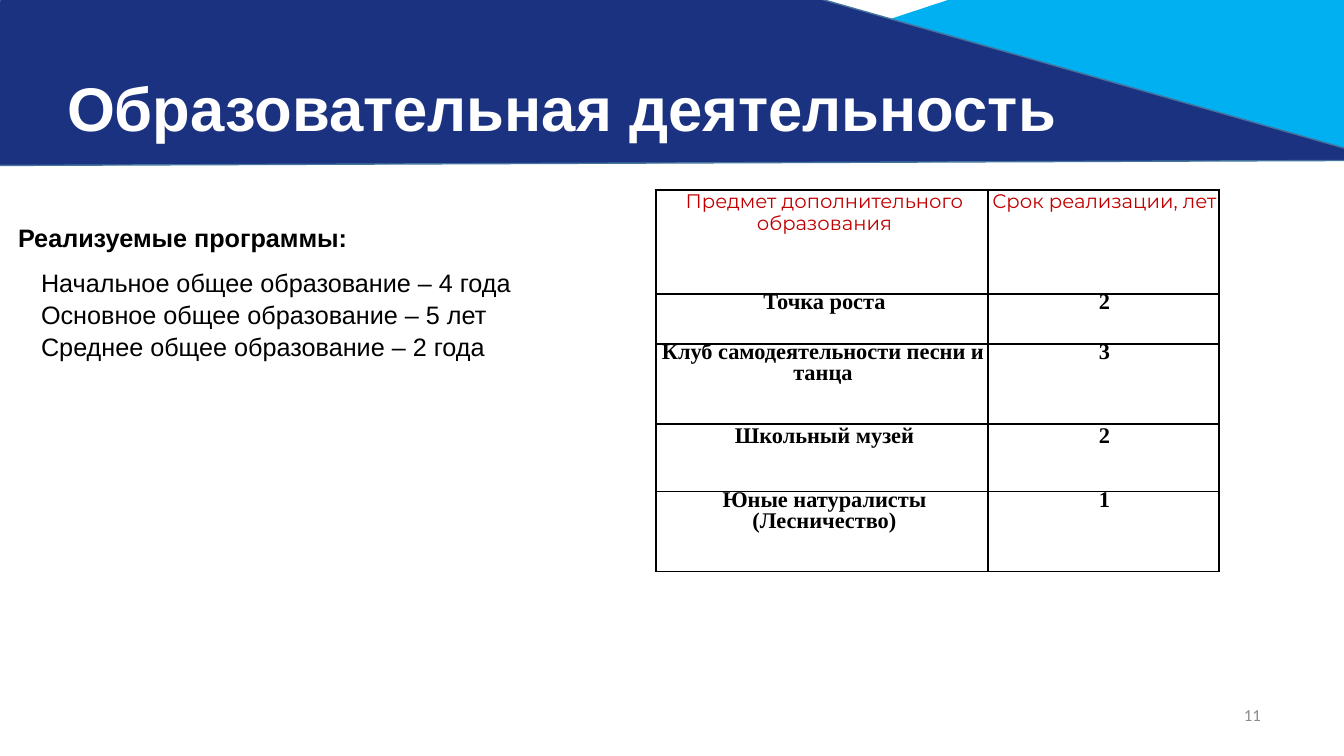
"""Build the slide about educational programmes."""
from dataclasses import dataclass

from lxml import etree
from pptx import Presentation
from pptx import util as u
from pptx.dml.color import RGBColor
from pptx.enum import shapes, text
from pptx.oxml.ns import qn

SCALE = 12192000 / 1344
LEADING = u.Pt(14.8)
AL, ANCHOR = text.PP_ALIGN, text.MSO_ANCHOR


def px(n: int) -> u.Emu:
    return u.Emu(round(n * SCALE))


def rgb(value: str) -> RGBColor:
    return RGBColor.from_string(value)


def apply(target, values: dict) -> None:
    for name, value in values.items():
        setattr(target, name, value)


@dataclass
class Block:
    box: tuple
    lines: list
    size: int
    color: str
    font: str = "Arial"
    bold: bool = False
    align: int = AL.LEFT
    anchor: int = ANCHOR.TOP
    spacing: float = 1.0


@dataclass
class Row:
    height: int
    name: str
    term: str
    before: float
    indent: int = 5
    exact: bool = True
    size: int = 16
    font: str = "Times New Roman"
    color: str = "000000"
    bold: bool = True


def place(sp, box: tuple) -> None:
    apply(sp, dict(zip(("left", "top", "width", "height"), map(px, box))))


def format_font(font, item) -> None:
    apply(font, {"name": item.font, "size": u.Pt(item.size), "bold": item.bold})
    font.color.rgb = rgb(item.color)


def write_block(sp, b: Block) -> None:
    place(sp, b.box)
    tf = sp.text_frame
    tf.text = "\n".join(b.lines)
    apply(tf, {"word_wrap": True, "auto_size": text.MSO_AUTO_SIZE.NONE,
               "vertical_anchor": b.anchor})
    for p in tf.paragraphs:
        apply(p, {"alignment": b.align, "space_before": u.Pt(0),
                  "line_spacing": b.spacing})
        pPr = p._p.get_or_add_pPr()
        pPr.set("marL", "0")
        pPr.set("indent", "0")
        etree.SubElement(pPr, qn("a:buNone"))
        format_font(p.runs[0].font, b)


def add_border(cell) -> None:
    tcPr = cell._tc.get_or_add_tcPr()
    for i, side in enumerate(("lnL", "lnR", "lnT", "lnB")):
        ln = etree.Element(qn(f"a:{side}"), w=str(u.Pt(1)))
        fill = etree.SubElement(ln, qn("a:solidFill"))
        etree.SubElement(fill, qn("a:srgbClr"), val="000000")
        tcPr.insert(i, ln)


def write_cell(cell, value: str, row: Row, indent: int) -> None:
    apply(cell, dict.fromkeys(
        ("margin_left", "margin_right", "margin_top", "margin_bottom"), 0))
    cell.fill.background()
    add_border(cell)
    tf = cell.text_frame
    tf.text = value
    for i, p in enumerate(tf.paragraphs):
        apply(p, {"alignment": AL.CENTER,
                  "space_before": u.Pt(0.7 if i else row.before)})
        if row.exact or i:
            p.line_spacing = LEADING
        p._p.get_or_add_pPr().set("marL", str(px(indent)))
        format_font(p.runs[0].font, row)


def add_table(s, left: int, top: int, widths: list, rows: list) -> None:
    box = (left, top, sum(widths), sum(row.height for row in rows))
    table = s.shapes.add_table(len(rows), len(widths), *map(px, box)).table
    apply(table, {"first_row": False, "horz_banding": False})
    for column, width in zip(table.columns, widths):
        column.width = px(width)
    for i, row in enumerate(rows):
        table.rows[i].height = px(row.height)
        write_cell(table.cell(i, 0), row.name, row, row.indent)
        write_cell(table.cell(i, 1), row.term, row, 2)


def add_banner(s) -> None:
    builder = s.shapes.build_freeform(463, 160, SCALE)
    builder.add_line_segments([(1348, 160), (1348, -132)])
    wedge = builder.convert_to_shape()
    stripe = s.shapes.add_shape(shapes.MSO_SHAPE.DIAGONAL_STRIPE,
                                *map(px, (-19, -36, 1378, 398)))
    stripe.rotation = 15.9
    for sp, color in ((wedge, "00B0F0"), (stripe, "1B3281")):
        sp.shadow.inherit = False
        sp.fill.solid()
        sp.fill.fore_color.rgb = rgb(color)
        s.shapes.title._element.addprevious(sp._element)
    wedge.line.fill.background()
    stripe.line.color.rgb = rgb("43739E")
    stripe.line.width = u.Pt(1)


TITLE = Block((57, 65, 1251, 120), ["Образовательная деятельность"], 44, "FFFFFF",
              bold=True, align=AL.JUSTIFY)
HEADING = Block((8, 217, 1336, 50), ["Реализуемые программы:"], 18, "000000", bold=True)
PROGRAMMES = Block((31, 261, 502, 132), [
    "Начальное общее образование – 4 года",
    "Основное общее образование – 5 лет",
    "Среднее общее образование – 2 года"], 18, "000000", spacing=1.05)
NUMBER = Block((969, 695, 302, 40), ["11"], 12, "8C8C8C", "Calibri",
               align=AL.RIGHT, anchor=ANCHOR.MIDDLE)
ROWS = [
    Row(104, "Предмет дополнительного\nобразования", "Срок реализации, лет", 1.2,
        exact=False, size=14, font="Montserrat", color="C00000", bold=False),
    Row(50, "Точка роста", "2", 1.2),
    Row(80, "Клуб самодеятельности песни и танца", "3", 0.1, indent=2),
    Row(68, "Школьный музей", "2", 0.1, exact=False),
    Row(80, "Юные натуралисты (Лесничество)", "1", 1.2),
]


def main() -> None:
    prs = Presentation()
    apply(prs, {"slide_width": px(1344), "slide_height": px(756)})
    s = prs.slides.add_slide(prs.slide_layouts[3])
    add_banner(s)
    for sp, block in zip(s.placeholders, (TITLE, HEADING, PROGRAMMES)):
        write_block(sp, block)
    add_table(s, 656, 190, [332, 231], ROWS)
    write_block(s.shapes.add_textbox(0, 0, 0, 0), NUMBER)
    prs.save("out.pptx")


if __name__ == "__main__":
    main()
